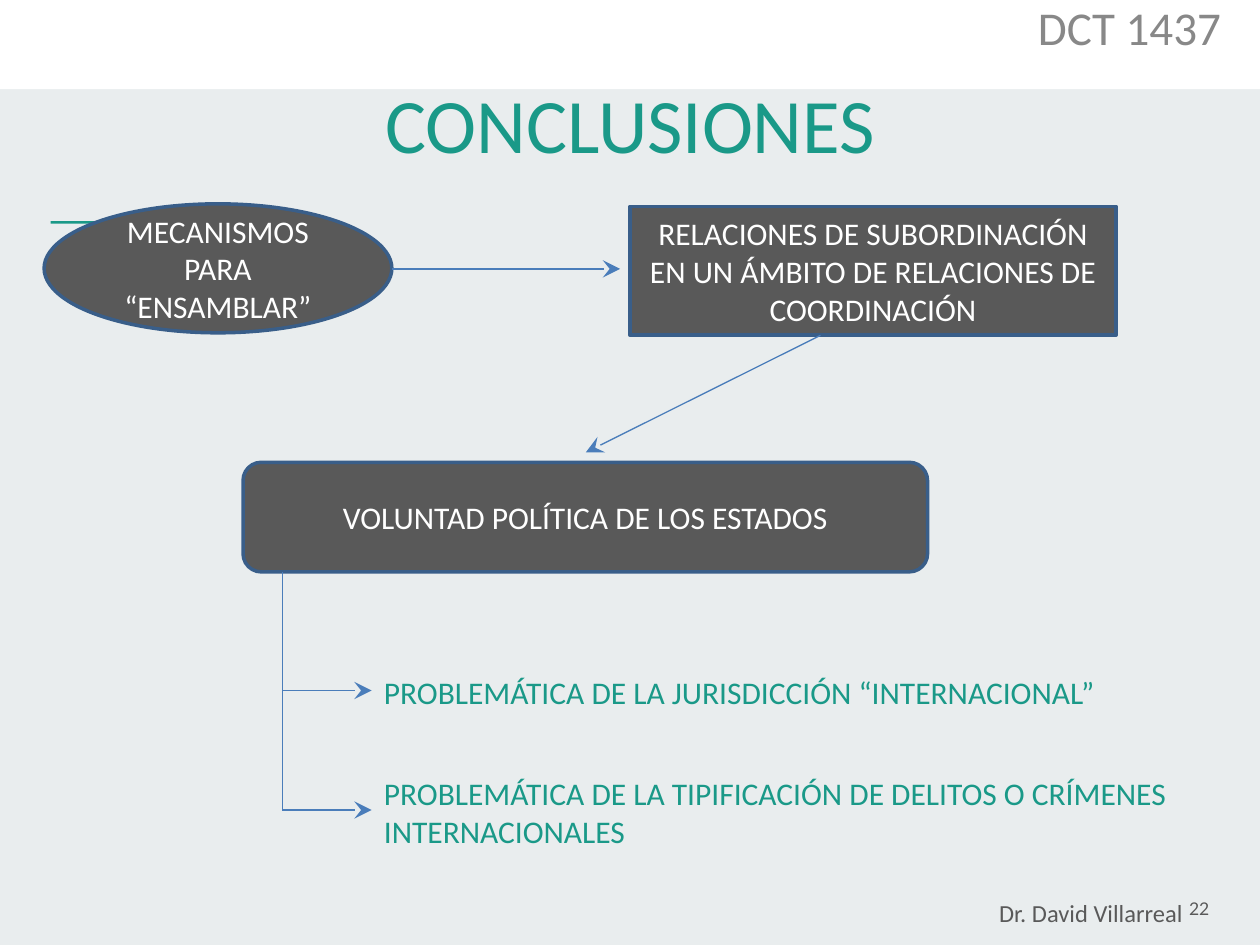
from dataclasses import dataclass

import pptx
import pptx.dml.color
import pptx.enum.shapes
import pptx.enum.text
import pptx.oxml
import pptx.oxml.ns
import pptx.util

Cm = pptx.util.Cm
Pt = pptx.util.Pt
Kind = pptx.enum.shapes.MSO_SHAPE
Align = pptx.enum.text.PP_ALIGN
Anchor = pptx.enum.text.MSO_ANCHOR

HUES = {
    "back": "E9EDEE",
    "white": "FFFFFF",
    "teal": "1A9988",
    "dark": "595959",
    "edge": "395E89",
    "arrow": "4A7DBA",
    "grey": "888888",
}


@dataclass
class Box:
    """A filled shape; places are in centimetres."""
    kind: Kind
    x: float
    y: float
    w: float
    h: float
    fill: str
    text: str = ""


@dataclass
class Label:
    text: str
    x: float
    y: float
    w: float
    h: float
    size: float = 18
    hue: str = "teal"
    font: str = "Calibri"
    align: Align = Align.LEFT
    anchor: Anchor = Anchor.TOP
    pad: float = 0.13


@dataclass
class Link:
    x1: float
    y1: float
    x2: float
    y2: float
    head: bool = True


STEM, TIP = 5.69, 7.49
ROW1, ROW2 = 13.92, 16.33

BOXES = [
    Box(Kind.RECTANGLE, 0, 0, 25.4, 1.8, "white"),
    Box(Kind.RECTANGLE, 1.02, 4.46, 1.05, 0.05, "teal"),
    Box(Kind.OVAL, 0.89, 4.11, 7.01, 2.6, "dark",
        "MECANISMOS PARA\n“ENSAMBLAR”"),
    Box(Kind.RECTANGLE, 12.7, 4.16, 9.8, 2.6, "dark",
        "RELACIONES DE SUBORDINACIÓN EN UN ÁMBITO DE RELACIONES DE COORDINACIÓN"),
    Box(Kind.ROUNDED_RECTANGLE, 4.9, 9.32, 13.8, 2.21, "dark",
        "VOLUNTAD POLÍTICA DE LOS ESTADOS"),
]

LINKS = [
    Link(STEM, 11.53, STEM, ROW2, head=False),
    Link(STEM, ROW1, TIP, ROW1),
    Link(STEM, ROW2, TIP, ROW2),
    Link(7.9, 5.42, 12.5, 5.42),
    Link(16.54, 6.76, 11.81, 9.12),
]

COURSE = Label("DCT 1437", 19.58, 0.05, 6.38, 1.45, 26.9, "grey",
               align=Align.CENTER)
LABELS = [
    Label("PROBLEMÁTICA DE LA JURISDICCIÓN “INTERNACIONAL”",
          TIP, 13.44, 18.06, 0.99),
    Label("PROBLEMÁTICA DE LA TIPIFICACIÓN DE DELITOS O CRÍMENES INTERNACIONALES",
          TIP, 15.47, 16.76, 1.73),
    Label("22", 23.72, 17.6, 1.52, 1.45, 10, "dark", "Lato",
          anchor=Anchor.MIDDLE),
    Label("Dr. David Villarreal", 19.89, 17.86, 6.58, 0.76, 14, "dark",
          pad=0.25),
]


def tint(name: str) -> pptx.dml.color.RGBColor:
    return pptx.dml.color.RGBColor.from_string(HUES[name])


def style(frame, size: float, hue: str, font: str, align: Align) -> None:
    frame.word_wrap = True
    for para in frame.paragraphs:
        para.alignment = align
        for run in para.runs:
            run.font.size = Pt(size)
            run.font.name = font
            run.font.color.rgb = tint(hue)


def draw_box(slide, box: Box) -> None:
    shape = slide.shapes.add_shape(
        box.kind, Cm(box.x), Cm(box.y), Cm(box.w), Cm(box.h))
    shape.shadow.inherit = False
    shape.fill.solid()
    shape.fill.fore_color.rgb = tint(box.fill)
    if not box.text:
        shape.line.fill.background()
        return
    shape.line.color.rgb = tint("edge")
    shape.line.width = Pt(2)
    frame = shape.text_frame
    frame.text = box.text
    frame.vertical_anchor = Anchor.MIDDLE
    style(frame, 18, "white", "Calibri", Align.CENTER)


def draw_link(slide, link: Link) -> None:
    line = slide.shapes.add_connector(
        pptx.enum.shapes.MSO_CONNECTOR.STRAIGHT,
        Cm(link.x1), Cm(link.y1), Cm(link.x2), Cm(link.y2))
    line.line.color.rgb = tint("arrow")
    line.line.width = Pt(0.75)
    space = pptx.oxml.ns.nsdecls("a")
    props = line._element.spPr
    if link.head:
        props.find(pptx.oxml.ns.qn("a:ln")).append(pptx.oxml.parse_xml(
            f'<a:tailEnd {space} type="stealth" w="lg" len="lg"/>'))
    props.append(pptx.oxml.parse_xml(f"<a:effectLst {space}/>"))


def draw_label(slide, label: Label):
    shape = slide.shapes.add_textbox(
        Cm(label.x), Cm(label.y), Cm(label.w), Cm(label.h))
    frame = shape.text_frame
    frame.text = label.text
    frame.vertical_anchor = label.anchor
    frame.margin_top = frame.margin_bottom = Cm(label.pad)
    style(frame, label.size, label.hue, label.font, label.align)
    return frame


def draw_title(slide) -> None:
    title = slide.shapes.title
    title.left, title.top = Cm(2.03), Cm(-0.61)
    title.width, title.height = Cm(21.36), Cm(6.17)
    frame = title.text_frame
    frame.text = "CONCLUSIONES"
    frame.vertical_anchor = Anchor.MIDDLE
    style(frame, 44, "teal", "Calibri", Align.CENTER)


def main() -> None:
    deck = pptx.Presentation()
    deck.slide_width, deck.slide_height = Cm(25.4), Cm(19.05)
    slide = deck.slides.add_slide(deck.slide_layouts[5])
    slide.background.fill.solid()
    slide.background.fill.fore_color.rgb = tint("back")

    draw_title(slide)
    for box in BOXES:
        draw_box(slide, box)
    for link in LINKS:
        draw_link(slide, link)
    for label in LABELS:
        draw_label(slide, label)

    para = draw_label(slide, COURSE).paragraphs[0]
    para.line_spacing = 0.8
    para.space_before = Pt(5.4)

    deck.save("out.pptx")


if __name__ == "__main__":
    main()
